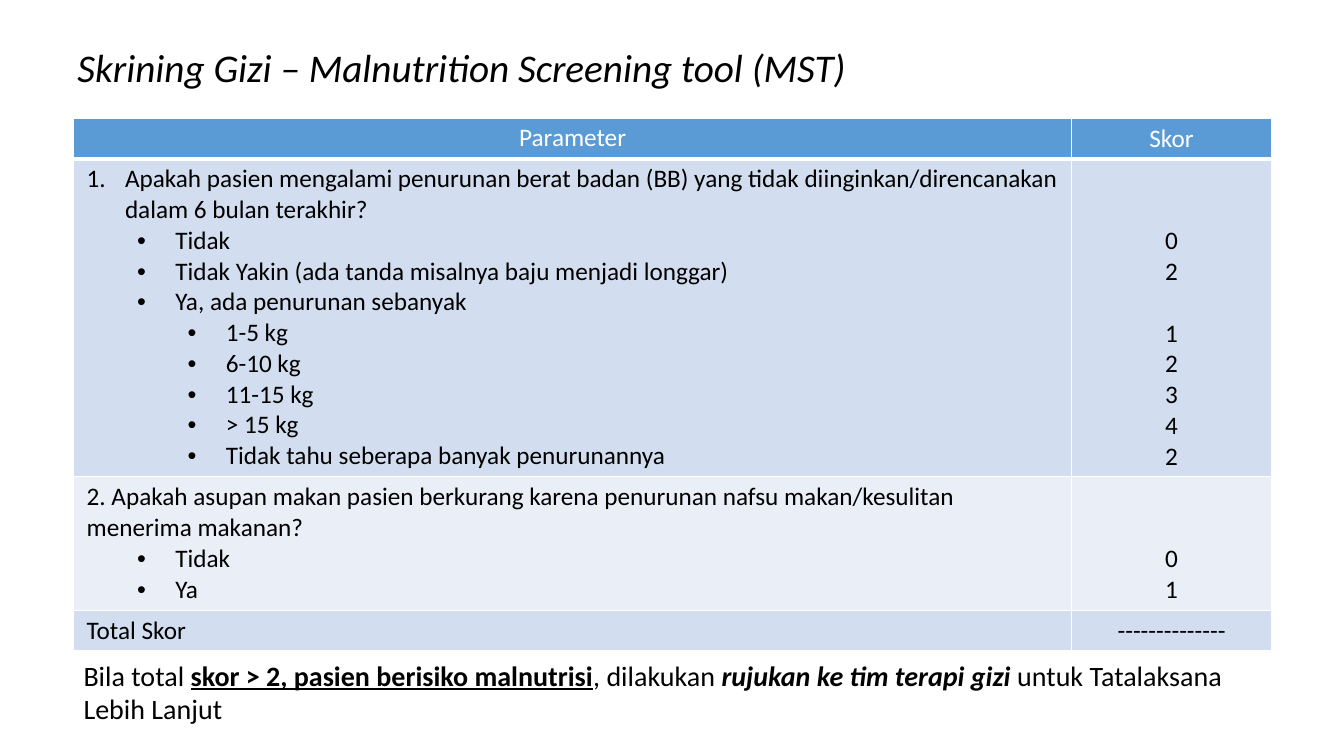
import pptx
import pptx.dml.color
import pptx.enum.text
import pptx.oxml.ns
import pptx.util
from lxml import etree

Inches = pptx.util.Inches
Pt = pptx.util.Pt
RGBColor = pptx.dml.color.RGBColor
Align = pptx.enum.text.PP_ALIGN
Anchor = pptx.enum.text.MSO_ANCHOR
qn = pptx.oxml.ns.qn

BLACK = RGBColor(0x00, 0x00, 0x00)
WHITE = RGBColor(0xFF, 0xFF, 0xFF)
BLUE = RGBColor(0x5B, 0x9B, 0xD5)
LIGHT = RGBColor(0xD2, 0xDE, 0xEF)
PALE = RGBColor(0xEA, 0xEF, 0xF7)

TITLE = "Skrining Gizi – Malnutrition Screening tool (MST)"
PLAIN, NUMBER, BULLET, SUBBULLET = range(4)
INDENTS = {NUMBER: 0.38, BULLET: 0.88, SUBBULLET: 1.38}
HANGING = 0.38

# Each row: fill, text colour, line count, parameter lines, scores with lines skipped before
ROWS = [
    (BLUE, WHITE, 1, [(PLAIN, "Parameter")], [("Skor", 0)]),
    (LIGHT, BLACK, 10, [
        (NUMBER, "Apakah pasien mengalami penurunan berat badan (BB) yang tidak "
                 "diinginkan/direncanakan dalam 6 bulan terakhir?"),
        (BULLET, "Tidak"),
        (BULLET, "Tidak Yakin (ada tanda misalnya baju menjadi longgar)"),
        (BULLET, "Ya, ada penurunan sebanyak"),
        (SUBBULLET, "1-5 kg"),
        (SUBBULLET, "6-10 kg"),
        (SUBBULLET, "11-15 kg"),
        (SUBBULLET, "> 15 kg"),
        (SUBBULLET, "Tidak tahu seberapa banyak penurunannya"),
    ], [("0", 0), ("2", 0), ("1", 1), ("2", 0), ("3", 0), ("4", 0), ("2", 0)]),
    (PALE, BLACK, 4, [
        (PLAIN, "2. Apakah asupan makan pasien berkurang karena penurunan nafsu "
                "makan/kesulitan menerima makanan?"),
        (BULLET, "Tidak"),
        (BULLET, "Ya"),
    ], [("0", 0), ("1", 0)]),
    (LIGHT, BLACK, 1, [(PLAIN, "Total Skor")], [("--------------", 0)]),
]
COLUMNS = [9.9, 1.98]
LINE_POINTS = 22

CONCLUSION = [
    ("Bila total ", False, False, False),
    ("skor > 2, pasien berisiko malnutrisi", True, False, True),
    (", dilakukan ", False, False, False),
    ("rujukan ke tim terapi gizi ", True, True, False),
    ("untuk Tatalaksana Lebih Lanjut", False, False, False),
]


def add_span(para, text, size, color, bold=False, italic=False, underline=False):
    span = para.add_run()
    span.text = text
    font = span.font
    font.name, font.size, font.color.rgb = "Calibri", Pt(size), color
    font.bold, font.italic, font.underline = bold, italic, underline


def add_box(page, left, top, width, height):
    frame = page.shapes.add_textbox(*map(Inches, (left, top, width, height))).text_frame
    frame.word_wrap = True
    return frame


def next_para(frame, index):
    return frame.add_paragraph() if index else frame.paragraphs[0]


def set_bullet(para, kind):
    if kind == PLAIN:
        return
    properties = para._p.get_or_add_pPr()
    properties.set("marL", str(Inches(INDENTS[kind])))
    properties.set("indent", str(-Inches(HANGING)))
    if kind == NUMBER:
        etree.SubElement(properties, qn("a:buFont"), typeface="+mj-lt")
        etree.SubElement(properties, qn("a:buAutoNum"), type="arabicPeriod")
    else:
        etree.SubElement(properties, qn("a:buFont"), typeface="Arial")
        etree.SubElement(properties, qn("a:buChar"), char="•")


def style_cell(cell, fill, bottom_width):
    cell.margin_left = cell.margin_right = Inches(0.13)
    cell.margin_top = cell.margin_bottom = Inches(0.05)
    cell.fill.solid()
    cell.fill.fore_color.rgb = fill
    properties = cell._tc.get_or_add_tcPr()
    for index, (side, width) in enumerate(
            [("L", 1), ("R", 1), ("T", 1), ("B", bottom_width)]):
        line = etree.Element(qn("a:ln" + side), w=str(Pt(width)))
        solid = etree.SubElement(line, qn("a:solidFill"))
        etree.SubElement(solid, qn("a:srgbClr"), val=str(WHITE))
        properties.insert(index, line)


def add_screening_table(page):
    heights = [Inches(0.1) + Pt(LINE_POINTS * row[2]) for row in ROWS]
    table = page.shapes.add_table(
        len(ROWS), len(COLUMNS), Inches(0.73), Inches(1.17),
        Inches(sum(COLUMNS)), sum(heights)).table
    for column, width in zip(table.columns, COLUMNS):
        column.width = Inches(width)
    for index, (fill, color, _, parameters, scores) in enumerate(ROWS):
        table.rows[index].height = heights[index]
        parameter_cell, score_cell = table.rows[index].cells
        for cell in (parameter_cell, score_cell):
            style_cell(cell, fill, 1 if index else 3)
        for position, (kind, text) in enumerate(parameters):
            para = next_para(parameter_cell.text_frame, position)
            if index == 0:
                para.alignment = Align.CENTER
            set_bullet(para, kind)
            add_span(para, text, 18, color)
        score_cell.vertical_anchor = Anchor.BOTTOM
        for position, (text, skipped) in enumerate(scores):
            para = next_para(score_cell.text_frame, position)
            para.alignment = Align.CENTER
            para.space_before = Pt(LINE_POINTS * skipped)
            add_span(para, text, 18, color)


def main():
    deck = pptx.Presentation()
    deck.slide_width, deck.slide_height = Inches(13.33), Inches(7.5)
    page = deck.slides.add_slide(deck.slide_layouts[6])

    title = add_box(page, 0.67, 0.3, 12, 0.79)
    title.vertical_anchor = Anchor.MIDDLE
    title.paragraphs[0].line_spacing = 0.9
    add_span(title.paragraphs[0], TITLE, 28, BLACK, italic=True)

    add_screening_table(page)

    conclusion = add_box(page, 0.73, 6.48, 11.88, 0.77)
    for text, bold, italic, underline in CONCLUSION:
        add_span(conclusion.paragraphs[0], text, 20, BLACK, bold, italic, underline)

    deck.save("out.pptx")


if __name__ == "__main__":
    main()
